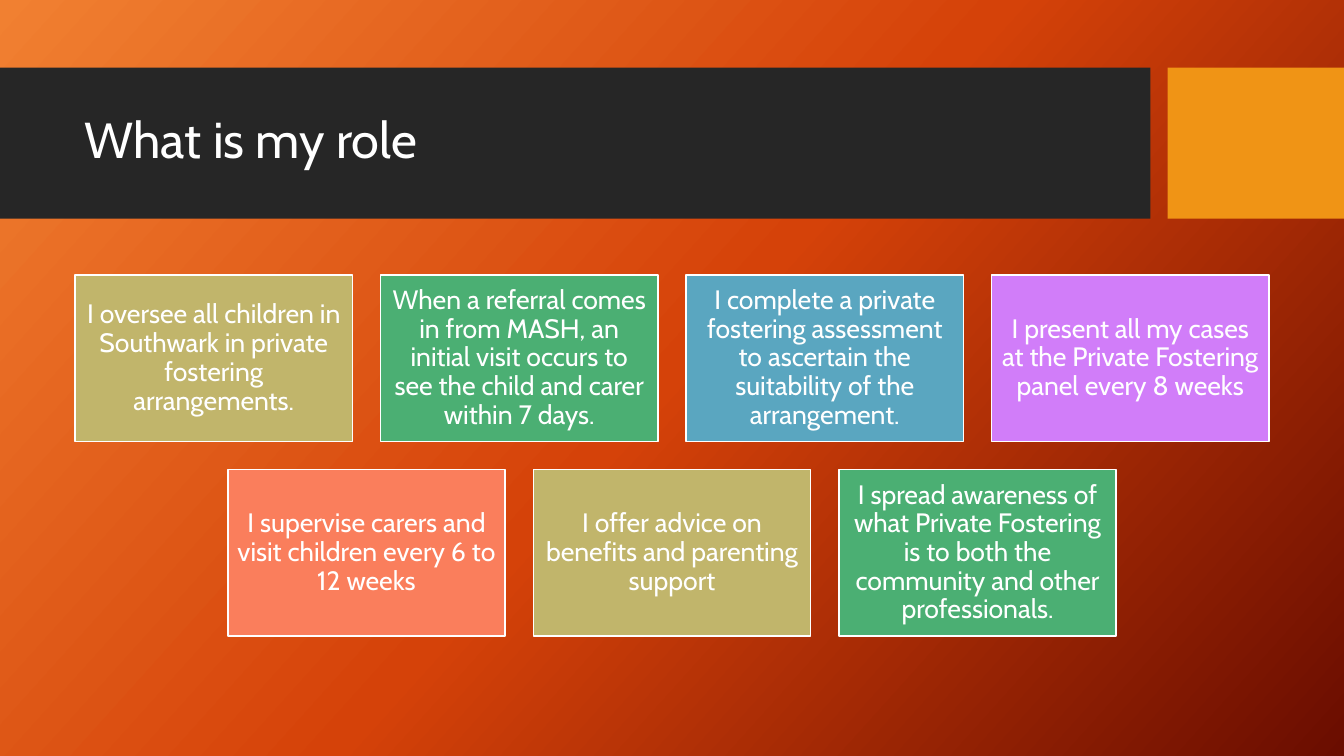
from copy import deepcopy
from dataclasses import dataclass

from pptx import Presentation
from pptx.dml.color import RGBColor
from pptx.enum.shapes import MSO_SHAPE as Preset
from pptx.enum.text import MSO_ANCHOR as Anchor, MSO_AUTO_SIZE as AutoSize, PP_ALIGN as Align
from pptx.oxml.ns import qn
from pptx.shapes.autoshape import Shape
from pptx.slide import Slide
from pptx.util import Inches, Pt

SLIDE_WIDTH, SLIDE_HEIGHT = 13.33, 7.5
CARD_WIDTH, CARD_HEIGHT, CARD_GAP = 2.75, 1.65, 0.28
CARDS_TOP = 2.73
FONT = "Cabin"
WHITE = "FFFFFF"
SAND, GREEN, BLUE, PURPLE, CORAL = "C1B56B", "4BAF73", "5AA6C0", "D17DF9", "FA7E5C"
BACKGROUND_STOPS = [(0, "F18031"), (0.5, "D54209"), (1, "6A0D00")]


@dataclass
class Box:
    left: float
    top: float
    width: float
    height: float


@dataclass
class Card:
    text: str
    fill: str


CARD_ROWS = [
    [
        Card("I oversee all children in Southwark in private fostering arrangements.", SAND),
        Card("When a referral comes in from MASH, an initial visit occurs to see "
             "the child and carer within 7 days.", GREEN),
        Card("I complete a private fostering assessment to ascertain the "
             "suitability of the arrangement.", BLUE),
        Card("I present all my cases at the Private Fostering panel every 8 weeks", PURPLE),
    ],
    [
        Card("I supervise carers and visit children every 6 to 12 weeks", CORAL),
        Card("I offer advice on benefits and parenting support", SAND),
        Card("I spread awareness of what Private Fostering is to both the "
             "community and other professionals.", GREEN),
    ],
]


def color(value: str) -> RGBColor:
    return RGBColor.from_string(value)


def write_text(shape: Shape, text: str, *, size: float, align: Align, inset: float) -> None:
    frame = shape.text_frame
    frame.word_wrap = True
    frame.auto_size = AutoSize.NONE
    frame.vertical_anchor = Anchor.MIDDLE
    frame.margin_left = frame.margin_right = Inches(inset)
    frame.margin_top = frame.margin_bottom = Inches(inset)
    frame.text = text
    paragraph = frame.paragraphs[0]
    paragraph.alignment = align
    paragraph.line_spacing = 0.9
    font = paragraph.runs[0].font
    font.name = FONT
    font.size = Pt(size)
    font.color.rgb = color(WHITE)


def add_box(slide: Slide, box: Box, fill: str, *, outline: str | None = None) -> Shape:
    shape = slide.shapes.add_shape(
        Preset.RECTANGLE, Inches(box.left), Inches(box.top), Inches(box.width), Inches(box.height)
    )
    shape.shadow.inherit = False
    shape.fill.solid()
    shape.fill.fore_color.rgb = color(fill)
    if outline:
        shape.line.color.rgb = color(outline)
        shape.line.width = Pt(1)
    else:
        shape.line.fill.background()
    return shape


def paint_background(slide: Slide) -> None:
    fill = slide.background.fill
    fill.gradient()
    fill.gradient_angle = 360 - 42
    stop_list = slide.element.find(".//" + qn("a:gsLst"))
    stop_list.append(deepcopy(stop_list[0]))
    for stop, (position, value) in zip(fill.gradient_stops, BACKGROUND_STOPS):
        stop.position = position
        stop.color.rgb = color(value)


def add_title(slide: Slide, text: str, box: Box) -> None:
    title = slide.shapes.title
    title.left, title.top = Inches(box.left), Inches(box.top)
    title.width, title.height = Inches(box.width), Inches(box.height)
    write_text(title, text, size=36, align=Align.LEFT, inset=0.1)
    slide.shapes.element.append(title.element)


def add_cards(slide: Slide) -> None:
    for row_index, cards in enumerate(CARD_ROWS):
        row_width = len(cards) * (CARD_WIDTH + CARD_GAP) - CARD_GAP
        row_left = (SLIDE_WIDTH - row_width) / 2
        top = CARDS_TOP + row_index * (CARD_HEIGHT + CARD_GAP)
        for column, card in enumerate(cards):
            left = row_left + column * (CARD_WIDTH + CARD_GAP)
            box = Box(left, top, CARD_WIDTH, CARD_HEIGHT)
            shape = add_box(slide, box, card.fill, outline=WHITE)
            write_text(shape, card.text, size=19, align=Align.CENTER, inset=0.08)


def main() -> None:
    presentation = Presentation()
    presentation.slide_width = Inches(SLIDE_WIDTH)
    presentation.slide_height = Inches(SLIDE_HEIGHT)
    slide = presentation.slides.add_slide(presentation.slide_layouts.get_by_name("Title Only"))
    paint_background(slide)
    add_box(slide, Box(0, 0.67, 11.41, 1.5), "262626")
    add_box(slide, Box(11.58, 0.67, 1.75, 1.5), "F09415")
    add_title(slide, "What is my role", Box(0.74, 0.82, 10.51, 1.18))
    add_cards(slide)
    presentation.save("out.pptx")


if __name__ == "__main__":
    main()
